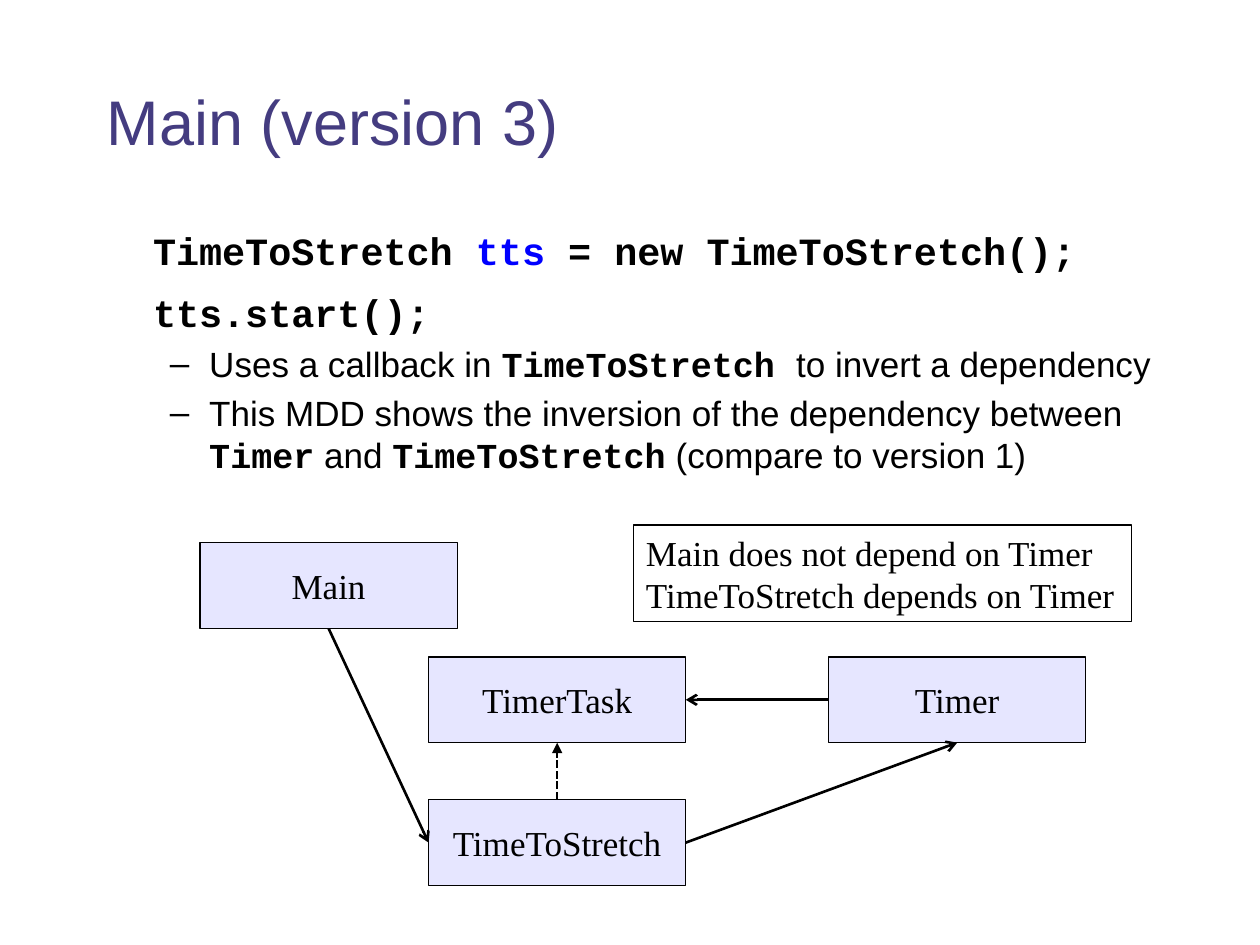
from dataclasses import dataclass
from typing import Optional

from lxml.etree import SubElement
from pptx import Presentation
from pptx.dml.color import RGBColor
from pptx.enum.dml import MSO_LINE
from pptx.enum.shapes import MSO_CONNECTOR, MSO_SHAPE
from pptx.enum.text import MSO_ANCHOR, PP_ALIGN
from pptx.oxml.ns import qn
from pptx.util import Pt

COLORS = {"title": "443C80", "black": "000000", "blue": "0000FF", "node": "E6E6FF"}
SANS, MONO, SERIF = "Arial", "Courier New", "Times New Roman"
NODE_WIDTH, NODE_HEIGHT = 147, 49
TOP, LEFT, BOTTOM, RIGHT = range(4)  # connection sites of a node


@dataclass
class Span:
    text: str
    font: str = SANS
    size: float = 20
    color: str = "black"
    bold: bool = False


@dataclass
class Line:
    spans: list[Span]
    margin: float = 0
    indent: float = 0
    space_before: float = 0
    line_spacing: Optional[float] = None
    bullet: Optional[str] = None


@dataclass
class Node:
    name: str
    left: float
    top: float


@dataclass
class Arrow:
    start: str
    start_site: int
    end: str
    end_site: int
    head: str = "arrow"
    dashed: bool = False


def code(text: str, size: float = 20, color: str = "black") -> Span:
    return Span(text, MONO, size, color, True)


def code_line(*spans: Span, line_spacing: Optional[float] = None) -> Line:
    return Line(list(spans), margin=26.4, space_before=4.8, line_spacing=line_spacing)


def bullet_line(*spans: Span) -> Line:
    return Line(list(spans), margin=58.5, indent=-22.5, space_before=4, bullet="–")


def rgb(name: str) -> RGBColor:
    return RGBColor.from_string(COLORS[name])


def write_lines(frame, lines: list[Line], align=PP_ALIGN.LEFT) -> None:
    for index, line in enumerate(lines):
        paragraph = frame.paragraphs[0] if index == 0 else frame.add_paragraph()
        paragraph.alignment = align
        paragraph.space_before = Pt(line.space_before)
        paragraph.line_spacing = line.line_spacing
        properties = paragraph._p.get_or_add_pPr()
        properties.set("marL", str(Pt(line.margin)))
        properties.set("indent", str(Pt(line.indent)))
        if line.bullet:
            SubElement(properties, qn("a:buFont"), typeface=SANS)
            SubElement(properties, qn("a:buChar"), char=line.bullet)
        for span in line.spans:
            run = paragraph.add_run()
            run.text = span.text
            run.font.name = span.font
            run.font.size = Pt(span.size)
            run.font.bold = span.bold
            run.font.color.rgb = rgb(span.color)


def add_text(page, left, top, width, height, lines: list[Line],
             anchor=MSO_ANCHOR.TOP, wrap: bool = True):
    box = page.shapes.add_textbox(Pt(left), Pt(top), Pt(width), Pt(height))
    box.text_frame.word_wrap = wrap
    box.text_frame.vertical_anchor = anchor
    write_lines(box.text_frame, lines)
    return box


def outline(shape, width: float) -> None:
    shape.line.color.rgb = rgb("black")
    shape.line.width = Pt(width)


def add_node(page, node: Node):
    shape = page.shapes.add_shape(MSO_SHAPE.ROUNDED_RECTANGLE, Pt(node.left), Pt(node.top),
                                  Pt(NODE_WIDTH), Pt(NODE_HEIGHT))
    shape.adjustments[0] = 0
    shape.shadow.inherit = False
    shape.fill.solid()
    shape.fill.fore_color.rgb = rgb("node")
    outline(shape, 0.75)
    frame = shape.text_frame
    frame.margin_left = frame.margin_top = frame.margin_right = frame.margin_bottom = 0
    frame.vertical_anchor = MSO_ANCHOR.MIDDLE
    write_lines(frame, [Line([Span(node.name, SERIF)])], PP_ALIGN.CENTER)
    return shape


def add_arrow(page, shapes: dict, arrow: Arrow) -> None:
    connector = page.shapes.add_connector(MSO_CONNECTOR.STRAIGHT, 0, 0, 0, 0)
    connector.begin_connect(shapes[arrow.start], arrow.start_site)
    connector.end_connect(shapes[arrow.end], arrow.end_site)
    outline(connector, 1.5)
    if arrow.dashed:
        connector.line.dash_style = MSO_LINE.SQUARE_DOT
    SubElement(connector.line._get_or_add_ln(), qn("a:tailEnd"), type=arrow.head)
    SubElement(connector._element.spPr, qn("a:effectLst"))


BODY = [
    code_line(code("TimeToStretch ", 22), code("tts ", 22, "blue"),
              code("= new TimeToStretch();", 22)),
    code_line(code("tts.start();", 22), line_spacing=1.17),
    bullet_line(Span("Uses a callback in "), code("TimeToStretch "),
                Span("to invert a dependency")),
    bullet_line(Span("This MDD shows the inversion of the dependency between "),
                code("Timer"), Span(" and "), code("TimeToStretch"),
                Span(" (compare to version 1)")),
]
NOTE = ["Main does not depend on Timer", "TimeToStretch depends on Timer"]
NODES = [
    Node("Main", 114.3, 310.2),
    Node("TimerTask", 244.9, 375.4),
    Node("Timer", 473.5, 375.4),
    Node("TimeToStretch", 244.9, 457),
]
ARROWS = [
    Arrow("Main", BOTTOM, "TimeToStretch", LEFT),
    Arrow("Timer", LEFT, "TimerTask", RIGHT),
    Arrow("TimeToStretch", RIGHT, "Timer", BOTTOM),
    Arrow("TimeToStretch", TOP, "TimerTask", BOTTOM, head="triangle", dashed=True),
]


def main() -> None:
    deck = Presentation()
    deck.slide_width, deck.slide_height = Pt(720), Pt(540)
    page = deck.slides.add_slide(deck.slide_layouts[6])

    # Title and body text
    title = Line([Span("Main (version 3)", size=36, color="title")])
    add_text(page, 54, 24, 612, 90, [title], MSO_ANCHOR.MIDDLE)
    add_text(page, 54, 126, 618, 354, BODY)

    # Dependency diagram
    shapes = {node.name: add_node(page, node) for node in NODES}
    for arrow in ARROWS:
        add_arrow(page, shapes, arrow)

    # Framed note
    note_lines = [Line([Span(text, SERIF)]) for text in NOTE]
    note = add_text(page, 362, 300, 284.4, 55.4, note_lines, wrap=False)
    outline(note, 0.75)

    deck.save("out.pptx")


if __name__ == "__main__":
    main()
